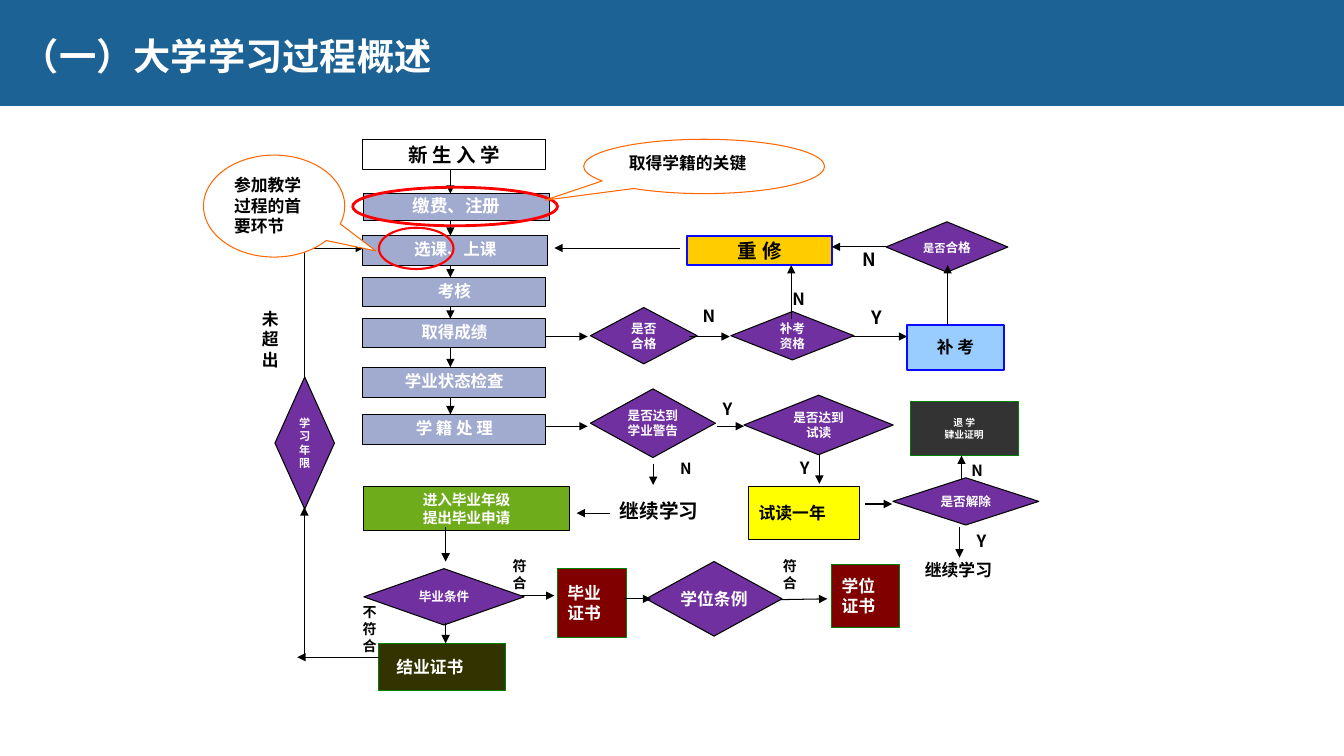
from pptx import Presentation
from pptx.dml.color import RGBColor
from pptx.enum.shapes import MSO_CONNECTOR, MSO_SHAPE
from pptx.enum.text import MSO_ANCHOR, PP_ALIGN
from pptx.oxml.ns import qn
from pptx.util import Cm, Pt
from lxml.etree import SubElement

FONT = "Noto Sans CJK SC"
WHITE = RGBColor(0xFF, 0xFF, 0xFF)
BLACK = RGBColor(0, 0, 0)
BLUE = RGBColor(0x1D, 0x62, 0x94)
LAVENDER = RGBColor(0xA1, 0xAB, 0xD0)
PURPLE = RGBColor(0x70, 0x30, 0xA0)
GOLD = RGBColor(0xFF, 0xCC, 0x00)
SKY = RGBColor(0x99, 0xCC, 0xFF)
EDGE_BLUE = RGBColor(0x0A, 0x0A, 0xFF)
EDGE_GREEN = RGBColor(0, 0x80, 0)
CHARCOAL = RGBColor(0x33, 0x33, 0x33)
YELLOW = RGBColor(0xFF, 0xFF, 0)
LEAF = RGBColor(0x6E, 0xAC, 0x1C)
MAROON = RGBColor(0x80, 0, 0)
OLIVE = RGBColor(0x33, 0x33, 0)
RED = RGBColor(0xFF, 0, 0)
ORANGE = RGBColor(0xFF, 0x66, 0)

LEFT, CENTER = PP_ALIGN.LEFT, PP_ALIGN.CENTER
TITLE = "（一）大学学习过程概述"

STEPS = [
    ("新 生 入 学", (9.14, 3.51, 4.62, 0.76), 13.9, WHITE, BLACK, 1),
    ("缴费、注册", (9.17, 4.88, 4.67, 0.69), 12.5, LAVENDER, WHITE, 0.8),
    ("选课、上课", (9.14, 5.94, 4.67, 0.74), 11.8, LAVENDER, WHITE, 0.9),
    ("考核", (9.14, 6.99, 4.62, 0.74), 11.8, LAVENDER, WHITE, 0.9),
    ("取得成绩", (9.14, 8.03, 4.62, 0.74), 11.8, LAVENDER, WHITE, 0.9),
    ("学业状态检查", (9.14, 9.25, 4.62, 0.76), 11.8, LAVENDER, WHITE, 0.9),
    ("学 籍 处 理", (9.14, 10.44, 4.62, 0.76), 11.8, LAVENDER, WHITE, 0.9),
]
STEP_ARROW_X = 11.35

OUTCOMES = [
    ("重 修", (17.32, 5.94, 3.66, 0.74), 14, GOLD, EDGE_BLUE, 1.5, BLACK, CENTER, 0.25),
    ("补 考", (22.86, 8.18, 2.44, 1.14), 12, SKY, EDGE_BLUE, 1.5, BLACK, CENTER, 0.25),
    ("退 学\n肄业证明", (22.94, 10.13, 2.72, 1.35), 7, CHARCOAL, EDGE_GREEN, 0.75, WHITE, CENTER, 0.25),
    ("试读一年", (18.87, 12.27, 2.79, 1.32), 12, YELLOW, BLACK, 0.75, BLACK, LEFT, 0.25),
    ("进入毕业年级\n提出毕业申请", (9.17, 12.27, 5.18, 1.09), 10.5, LEAF, BLACK, 0.75, WHITE, CENTER, 0.25),
    ("毕业\n证书", (14.05, 14.33, 1.73, 1.73), 12, MAROON, EDGE_GREEN, 0.75, WHITE, LEFT, 0.25),
    ("学位\n证书", (20.96, 14.22, 1.7, 1.6), 12, MAROON, EDGE_GREEN, 0.75, WHITE, LEFT, 0.25),
    ("结业证书", (9.55, 16.21, 3.18, 1.19), 12, OLIVE, EDGE_GREEN, 0.75, WHITE, LEFT, 0.44),
]

DECISIONS = [
    ("是否|合格", (22.33, 5.59, 3.07, 1.27), (8, 9)),
    ("是否\n合格", (14.88, 7.75, 2.69, 1.42), 9),
    ("补考\n资格", (18.42, 7.85, 3.1, 1.22), 9),
    ("是否达到\n学业警告", (14.88, 9.8, 3.15, 1.73), 9),
    ("是否达到\n试读", (18.75, 9.96, 3.76, 1.5), 9),
    ("是否解除", (22.5, 12.04, 3.68, 1.19), 9),
    ("毕业条件", (9.17, 14.33, 4.04, 1.42), 9),
    ("学位条例", (16.28, 14.15, 3.43, 1.88), 12),
    ("学\n习\n年\n限", (6.93, 9.5, 1.5, 3.33), 8),
]

LABELS = [
    ("N", (19.94, 7.29, 0.28, 0.48), 12),
    ("N", (21.49, 6.38, 0.51, 0.3), 13),
    ("N", (17.68, 7.72, 0.28, 0.48), 12),
    ("Y", (21.72, 7.72, 0.74, 0.53), 13),
    ("Y", (17.96, 10.13, 0.53, 0.33), 12),
    ("Y", (19.91, 11.63, 0.53, 0.33), 12),
    ("Y", (24.36, 13.46, 0.53, 0.33), 12),
    ("N", (24.23, 11.63, 0.51, 0.46), 11),
    ("N", (16.89, 11.58, 0.51, 0.46), 11),
    ("符合", (12.67, 14.33, 1.09, 0.3), 10),
    ("符合", (19.48, 14.33, 0.91, 0.3), 10),
    ("不符合", (8.89, 15.7, 1.19, 0.3), 10),
    ("未\n超\n出", (6.35, 7.57, 1.14, 1.96), 12),
]
CONTINUE_LABELS = [
    ("继续学习", (23.06, 13.97, 3, 0.84), 12),
    ("继续学习", (15.37, 12.45, 3.07, 0.33), 14),
]

ARROWS = [
    (19.94, 8.03, 19.94, 6.68), (17.15, 6.25, 13.97, 6.25),
    (13.77, 8.48, 14.81, 8.48), (22.33, 6.22, 20.96, 6.22),
    (23.88, 8.18, 23.88, 6.68), (17.37, 8.48, 18.39, 8.48),
    (21.49, 8.48, 22.86, 8.48), (20.65, 11.43, 20.65, 12.19),
    (18.06, 10.74, 18.75, 10.74), (13.77, 10.74, 14.81, 10.74),
    (24.23, 12.09, 24.23, 11.48), (21.79, 12.7, 22.48, 12.7),
    (24.18, 13.28, 24.18, 14.05), (16.46, 11.68, 16.46, 12.22),
    (15.37, 12.93, 14.53, 12.93), (11.23, 15.7, 11.23, 16.21),
    (13.11, 15.01, 13.97, 15.01), (15.72, 15.09, 16.41, 15.09),
    (19.66, 15.11, 20.85, 15.09), (7.67, 6.25, 9.17, 6.25),
    (9.55, 16.56, 7.49, 16.56), (7.67, 16.56, 7.67, 12.78),
    (11.23, 13.28, 11.23, 14.15),
]
RETURN_LINE = (7.67, 9.5, 7.67, 6.25)

RINGS = [((9.55, 5.74, 1.88, 1.04), 1.5), ((8.89, 4.72, 5.16, 0.97), 2)]
CALLOUTS = [
    ("取得学籍的关键", (14.71, 3.51, 6.07, 1.37), (-0.66, 0.62)),
    ("参加教学过程的首要环节", (5.13, 3.91, 3.56, 2.57), (0.72, 0.44)),
]


def write(shape, text, size, color, align=LEFT, spacing=1, anchor=MSO_ANCHOR.MIDDLE,
          wrap=False, inset=0.25, side=0.25):
    frame = shape.text_frame
    settings = {"word_wrap": wrap, "vertical_anchor": anchor,
                "margin_left": Cm(inset), "margin_right": Cm(side),
                "margin_top": Cm(0.13), "margin_bottom": Cm(0.13)}
    for name, value in settings.items():
        setattr(frame, name, value)
    sizes = size if isinstance(size, tuple) else (size,)
    for index, line in enumerate(text.split("\n")):
        para = frame.add_paragraph() if index else frame.paragraphs[0]
        para.alignment, para.line_spacing = align, spacing
        for part, points in zip(line.split("|"), sizes):
            span = para.add_run()
            span.text = part
            for name, value in {"name": FONT, "size": Pt(points), "bold": True}.items():
                setattr(span.font, name, value)
            span.font.color.rgb = color
            SubElement(span._r.get_or_add_rPr(), qn("a:ea"), typeface=FONT)


def add_box(page, kind, place, fill, edge, width=0.75):
    box = page.shapes.add_shape(kind, *map(Cm, place))
    box.shadow.inherit = False
    if fill is None:
        box.fill.background()
    else:
        box.fill.solid()
        box.fill.fore_color.rgb = fill
    box.line.color.rgb = edge
    box.line.width = Pt(width)
    return box


def add_line(page, ends, arrow=True):
    line = page.shapes.add_connector(MSO_CONNECTOR.STRAIGHT, *map(Cm, ends))
    line.line.color.rgb = BLACK
    line.line.width = Pt(0.75)
    if arrow:
        SubElement(line.line._get_or_add_ln(), qn("a:tailEnd"), type="triangle")
    SubElement(line._element.spPr, qn("a:effectLst"))


def main():
    deck = Presentation()
    deck.slide_width, deck.slide_height = Cm(33.87), Cm(19.05)
    page = deck.slides.add_slide(deck.slide_layouts[5])

    title = page.shapes.title
    title.left, title.top, title.width, title.height = map(Cm, (0, 0, 33.87, 2.67))
    title.fill.solid()
    title.fill.fore_color.rgb = BLUE
    write(title, TITLE, 26.6, WHITE, spacing=1.1, wrap=True, inset=0.55)

    for text, place, size, fill, color, spacing in STEPS:
        box = add_box(page, MSO_SHAPE.RECTANGLE, place, fill, BLACK)
        write(box, text, size, color, CENTER, spacing, inset=0, side=0)
    for text, place, size, fill, edge, width, color, align, inset in OUTCOMES:
        box = add_box(page, MSO_SHAPE.RECTANGLE, place, fill, edge, width)
        write(box, text, size, color, align, inset=inset)
    for text, place, size in DECISIONS:
        box = add_box(page, MSO_SHAPE.DIAMOND, place, PURPLE, BLACK)
        write(box, text, size, WHITE, CENTER)

    for upper, lower in zip(STEPS, STEPS[1:]):
        bottom = upper[1][1] + upper[1][3]
        add_line(page, (STEP_ARROW_X, bottom, STEP_ARROW_X, lower[1][1]))
    for ends in ARROWS:
        add_line(page, ends)
    add_line(page, RETURN_LINE, arrow=False)

    for text, place, size in LABELS:
        write(page.shapes.add_textbox(*map(Cm, place)), text, size, BLACK)
    for text, place, size in CONTINUE_LABELS:
        label = page.shapes.add_textbox(*map(Cm, place))
        write(label, text, size, BLACK, anchor=MSO_ANCHOR.TOP, wrap=True)

    for place, width in RINGS:
        add_box(page, MSO_SHAPE.OVAL, place, None, RED, width)
    for text, place, tip in CALLOUTS:
        callout = add_box(page, MSO_SHAPE.OVAL_CALLOUT, place, WHITE, ORANGE)
        callout.adjustments[0], callout.adjustments[1] = tip
        write(callout, text, 12, BLACK, anchor=MSO_ANCHOR.TOP, wrap=True)

    deck.save("out.pptx")


if __name__ == "__main__":
    main()
